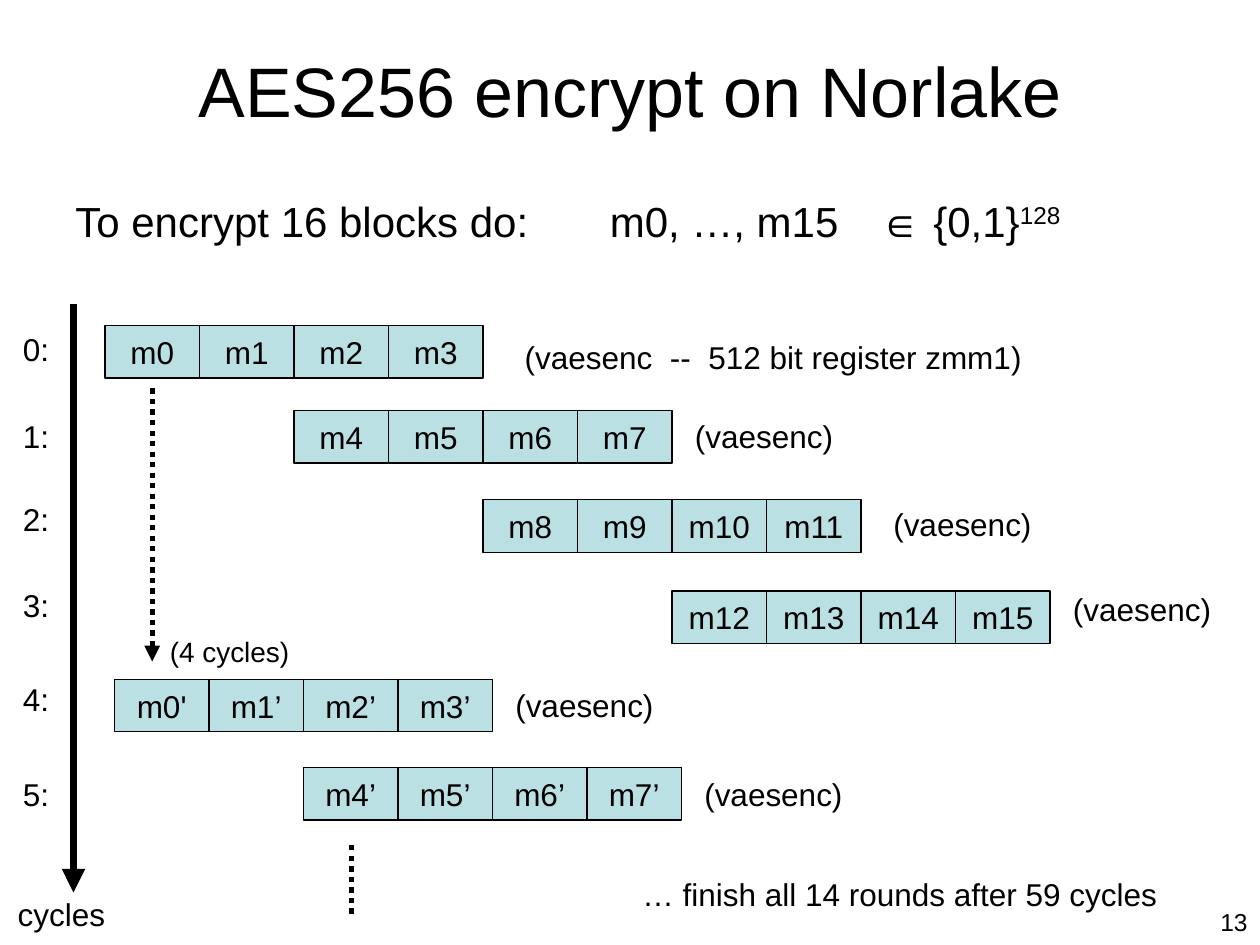
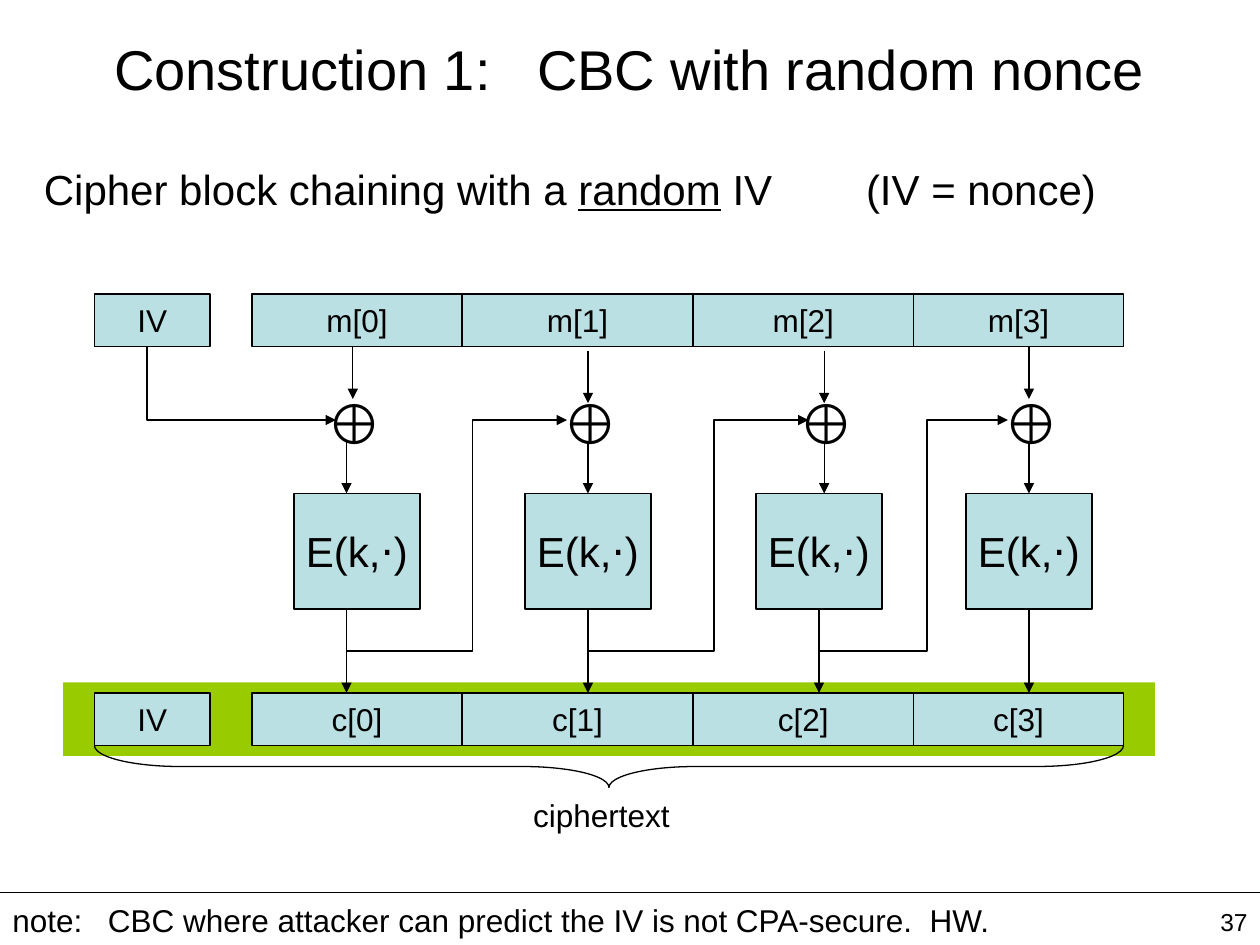
"""Build two slides on block cipher pipelines and CBC with a random nonce."""
from lxml import etree
from pptx import Presentation
from pptx import util as u
from pptx.dml.color import RGBColor
from pptx.enum import dml, shapes, text
from pptx.oxml.ns import qn

BLACK = RGBColor(0x00, 0x00, 0x00)
AQUA = RGBColor(0xBB, 0xE0, 0xE3)
GREEN = RGBColor(0x99, 0xCC, 0x00)
FONT = "Arial"
COLS, ROWS = 120, 90
LEFT, MID, RIGHT = text.PP_ALIGN.LEFT, text.PP_ALIGN.CENTER, text.PP_ALIGN.RIGHT

deck = Presentation()
deck.slide_width, deck.slide_height = u.Inches(10), u.Inches(7.5)
CELL = deck.slide_width // COLS


def box(page, x, y, w, h, words, size=18, align=LEFT, fill=None, tabs=(), lead=0):
    """Place text by grid cells, in a filled rectangle if a fill is given."""
    area = [round(n * CELL) for n in (x, y, w, h)]
    if fill is None:
        item = page.shapes.add_textbox(*area)
    else:
        item = page.shapes.add_shape(shapes.MSO_SHAPE.RECTANGLE, *area)
        item.shadow.inherit = False
        item.fill.solid()
        item.fill.fore_color.rgb = fill
        item.line.color.rgb = BLACK
        item.line.width = u.Pt(0.75)
    frame = item.text_frame
    frame.word_wrap = True
    if align == MID:
        frame.margin_left = frame.margin_right = 0
        frame.vertical_anchor = text.MSO_ANCHOR.MIDDLE
    para = frame.paragraphs[0]
    para.alignment = align
    para.space_before = u.Pt(lead)
    if tabs:
        stops = etree.SubElement(para.element if hasattr(para, "element") else para._p.pPr, qn("a:tabLst"))
        for stop in tabs:
            etree.SubElement(stops, qn("a:tab"), pos=str(round(stop * CELL)), algn="l")
    for word in words:
        run = para.add_run()
        run.text = word
        run.font.name, run.font.size = FONT, u.Pt(size)
        run.font.color.rgb = BLACK
    return item


def link(page, *spots, width=0.75, dash=None, head=True):
    """Join grid points by a straight line or an elbow path."""
    spots = [(round(x * CELL), round(y * CELL)) for x, y in spots]
    if len(spots) == 2:
        item = page.shapes.add_connector(shapes.MSO_CONNECTOR.STRAIGHT, *spots[0], *spots[1])
    else:
        pen = page.shapes.build_freeform(*spots[0])
        pen.add_line_segments(spots[1:], close=False)
        item = pen.convert_to_shape()
        item.fill.background()
    item.line.color.rgb = BLACK
    item.line.width = u.Pt(width)
    if dash:
        item.line.dash_style = dash
    props = item.element.spPr
    if head:
        etree.SubElement(props.find(qn("a:ln")), qn("a:tailEnd"), type="triangle")
    etree.SubElement(props, qn("a:effectLst"))


pages = []
for name, size, top, num in (
    ("AES256 encrypt on Norlake", 40, 3, "13"),
    ("Construction 1:   CBC with random nonce", 32, 1, "37"),
):
    page = deck.slides.add_slide(deck.slide_layouts[5])
    title = page.shapes.title
    title.left, title.top = 6 * CELL, top * CELL
    title.width, title.height = 108 * CELL, 11 * CELL
    title.text_frame.vertical_anchor = text.MSO_ANCHOR.MIDDLE
    para = title.text_frame.paragraphs[0]
    para.alignment = MID
    run = para.add_run()
    run.text = name
    run.font.name, run.font.size = FONT, u.Pt(size)
    run.font.color.rgb = BLACK
    box(page, 92, 85.8, 28, 4.2, [num], 14, RIGHT)
    pages.append(page)
pipe, chain = pages

goal = box(pipe, 6, 18, 108, 7, ["To encrypt 16 blocks do:\tm0, …, m15\t∈ {0,1}", "128"],
           24, tabs=(50.9, 76.6), lead=4.8)
goal.element.findall(".//" + qn("a:rPr"))[-1].set("baseline", "30000")

DOTS = dml.MSO_LINE.ROUND_DOT
link(pipe, (7, 29), (7, 85), width=4.5)
box(pipe, 0.5, 84.7, 14, 4.8, ["cycles"])
link(pipe, (14.5, 37), (14.5, 63), width=3, dash=DOTS)
box(pipe, 15, 59.8, 18, 4.4, ["(4 cycles)"], 16)
link(pipe, (33.5, 80.5), (33.5, 87.1), width=3, dash=DOTS, head=False)
box(pipe, 60, 82.7, 56, 4.8, ["… finish all 14 rounds after 59 cycles"])

STEP = 9
LONG, SHORT = "(vaesenc  --  512 bit register zmm1)", "(vaesenc)"
steps = (
    (10, 31, "m0 m1 m2 m3", LONG, 48.8, 31.6, 30.8),
    (28, 39.1, "m4 m5 m6 m7", SHORT, 65, 39.1, 39.1),
    (46, 47.6, "m8 m9 m10 m11", SHORT, 83.9, 47.5, 47),
    (64, 56.3, "m12 m13 m14 m15", SHORT, 101, 55.6, 55.2),
    (10.9, 64.7, "m0' m1’ m2’ m3’", SHORT, 47.9, 64.7, 64.2),
    (28.9, 73.1, "m4’ m5’ m6’ m7’", SHORT, 65.9, 73.2, 73.2),
)
for tick, (x, y, names, note, left, top, mark) in enumerate(steps):
    for i, name in enumerate(names.split()):
        box(pipe, x + i * STEP, y, STEP, 5, [name], align=MID, fill=AQUA)
    box(pipe, left, top, 54 if note == LONG else 18, 4.8, [note])
    box(pipe, 1, mark, 6, 4.8, [f"{tick}:"])

band = box(chain, 6, 65, 104, 7, [], fill=GREEN)
band.line.fill.background()
topic = box(chain, 3, 15, 115, 7, ["Cipher block chaining with a ", "random", " IV\t(IV = nonce)"],
            24, tabs=(78.3,), lead=4.8)
topic.text_frame.paragraphs[0].runs[1].font.underline = True

for y, sign in ((28, "m"), (66, "c")):
    box(chain, 9, y, 11, 5, ["IV"], align=MID, fill=AQUA)
    for i, (x, w) in enumerate(((24, 20), (44, 22), (66, 21), (87, 20))):
        box(chain, x, y, w, 5, [f"{sign}[{i}]"], align=MID, fill=AQUA)

lanes = (
    (28, 30.5, 33.6, 33, 33, 33),
    (50, 53, 56, 33.4, 56, 56),
    (72, 75.5, 78.5, 33.4, 78.5, 78),
    (92, 95, 98, 33, 98, 98),
)
for x, plus, drop, top, feed, out in lanes:
    box(chain, x, 47, 12, 11, ["E(k,⋅)"], 24, MID, AQUA)
    box(chain, plus, 36.4, 6.5, 7.6, ["⊕"], 32, MID)
    link(chain, (drop, top), (drop, top + 5))
    link(chain, (feed, 42), (feed, 47))
    link(chain, (out, 58), (out, 66))
link(chain, (14, 33), (14, 40), (32, 40), width=1)
for x, turn, end in ((33, 45, 54), (56, 68, 77), (78, 88.3, 96)):
    link(chain, (x, 62), (turn, 62), (turn, 40), (end, 40))

brace = chain.shapes.add_shape(shapes.MSO_SHAPE.LEFT_BRACE, 56 * CELL, 24 * CELL, 4 * CELL, 98 * CELL)
brace.rotation = 270
brace.adjustments[0], brace.adjustments[1] = 2.04, 0.5
brace.shadow.inherit = False
brace.fill.background()
brace.line.color.rgb = BLACK
brace.line.width = u.Pt(0.75)
box(chain, 49.6, 75.2, 18, 4.8, ["ciphertext"])
box(chain, 0, 85.2, 100, 4.8, ["note:\tCBC where attacker can predict the IV is not CPA-secure.  HW."], tabs=(9.1,))
link(chain, (0, 85), (COLS, 85), head=False)

deck.save("out.pptx")
